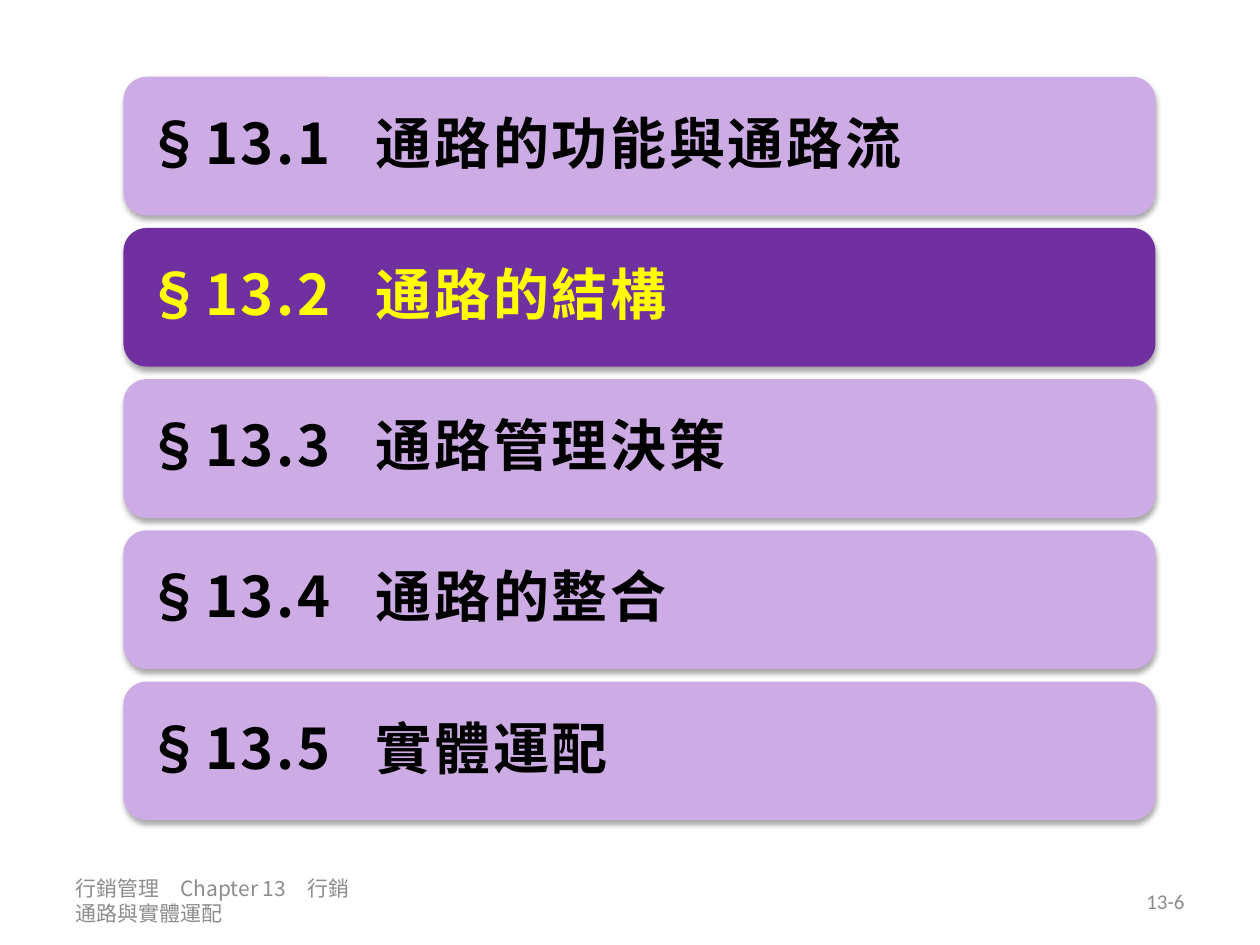
import pptx
import pptx.util
import pptx.dml.color
import pptx.enum.shapes
import pptx.enum.text
import pptx.oxml
import pptx.oxml.ns
import lxml.etree

Inches, Pt = pptx.util.Inches, pptx.util.Pt
Align = pptx.enum.text.PP_ALIGN
qn = pptx.oxml.ns.qn

TOPICS = [
    ("§13.1", "通路的功能與通路流"),
    ("§13.2", "通路的結構"),
    ("§13.3", "通路管理決策"),
    ("§13.4", "通路的整合"),
    ("§13.5", "實體運配"),
]
ACTIVE = 1
FOOTER = "行銷管理　Chapter 13　行銷通路與實體運配"
PAGE = "13-6"

THEME = {
    "cjk": "Noto Sans CJK SC", "latin": "Calibri",
    "bar": "CDACE6", "text": "000000",
    "bar_on": "7030A0", "text_on": "FFFF00",
    "foot": "8C8C8C", "shadow": "000000",
    "size": 32, "small": 12,
}
LEFT, TOP, WIDTH, HEIGHT, STEP = 0.98, 0.61, 8.19, 1.1, 1.2
INSET, TAB = 0.13, 1.82


def rgb(key):
    return pptx.dml.color.RGBColor.from_string(THEME[key])


def add_run(para, text, face, size, color, bold=False, space=0):
    run = para.add_run()
    run.text = text
    font = run.font
    font.size, font.bold = Pt(THEME[size]), bold
    font.color.rgb = rgb(color)
    font.name = THEME[face]
    props = run._r.get_or_add_rPr()
    lxml.etree.SubElement(props, qn("a:ea")).set("typeface", THEME["cjk"])
    if space:
        props.set("spc", str(round(space * 100)))


def add_shadow(shape):
    """Give the shape a soft shadow straight below it."""
    shape.shadow.inherit = False
    effects = shape._element.spPr.find(qn("a:effectLst"))
    outer = lxml.etree.SubElement(
        effects, qn("a:outerShdw"), blurRad=str(Pt(3.1)),
        dist=str(Pt(1.8)), dir="5400000", rotWithShape="0")
    color = lxml.etree.SubElement(outer, qn("a:srgbClr"), val=THEME["shadow"])
    lxml.etree.SubElement(color, qn("a:alpha"), val="35000")


def add_bar(slide, index, number, title):
    mark = "_on" if index == ACTIVE else ""
    bar = slide.shapes.add_shape(
        pptx.enum.shapes.MSO_SHAPE.ROUNDED_RECTANGLE, Inches(LEFT),
        Inches(TOP + index * STEP), Inches(WIDTH), Inches(HEIGHT))
    bar.fill.solid()
    bar.fill.fore_color.rgb = rgb("bar" + mark)
    bar.line.fill.background()
    add_shadow(bar)

    frame = bar.text_frame
    frame.word_wrap = True
    frame.vertical_anchor = pptx.enum.text.MSO_ANCHOR.MIDDLE
    frame.margin_left = frame.margin_right = Inches(INSET)
    frame.margin_top = frame.margin_bottom = Inches(INSET)
    para = frame.paragraphs[0]
    tabs = lxml.etree.SubElement(para._p.get_or_add_pPr(), qn("a:tabLst"))
    lxml.etree.SubElement(tabs, qn("a:tab"), pos=str(Inches(TAB)), algn="l")
    para.alignment = Align.LEFT
    para.line_spacing = 0.9
    para.space_after = Pt(THEME["size"] * 0.35)
    add_run(para, number + "\t", "cjk", "size", "text" + mark, True, 1.5)
    add_run(para, title, "latin", "size", "text" + mark, True, 1.5)


def add_note(slide, left, width, text, face, align):
    box = slide.shapes.add_textbox(
        Inches(left), Inches(6.95), Inches(width), Inches(0.4))
    frame = box.text_frame
    frame.word_wrap = True
    frame.vertical_anchor = pptx.enum.text.MSO_ANCHOR.MIDDLE
    para = frame.paragraphs[0]
    para.alignment = align
    add_run(para, text, face, "small", "foot")


def main():
    deck = pptx.Presentation()
    deck.slide_width, deck.slide_height = Inches(10), Inches(7.5)
    slide = deck.slides.add_slide(deck.slide_layouts[6])
    add_note(slide, 0.5, 2.45, FOOTER, "cjk", Align.LEFT)
    add_note(slide, 7.17, 2.33, PAGE, "latin", Align.RIGHT)
    for index, (number, title) in enumerate(TOPICS):
        add_bar(slide, index, number, title)
    deck.save("out.pptx")


if __name__ == "__main__":
    main()
